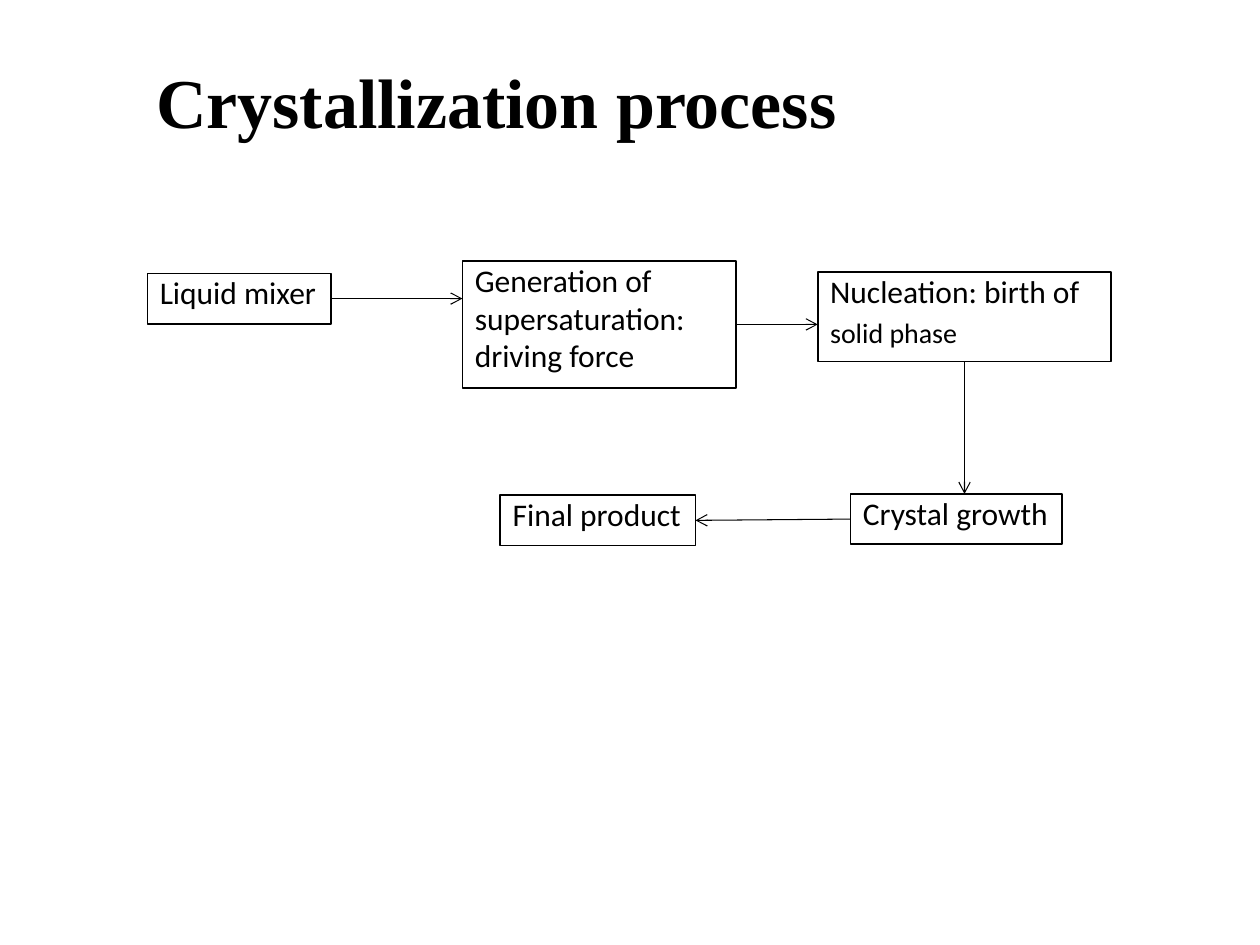
from lxml.etree import SubElement
from pptx import Presentation
from pptx.dml.color import RGBColor
from pptx.enum.shapes import MSO_CONNECTOR, MSO_SHAPE
from pptx.enum.text import MSO_ANCHOR, MSO_AUTO_SIZE, PP_ALIGN
from pptx.oxml.ns import qn
from pptx.util import Inches, Pt

BLACK = RGBColor(0, 0, 0)


def write_text(frame, text, sizes, font="Calibri", bold=False, spacing=1.0,
               gap=0, left=0.1, top=0):
    frame.word_wrap = True
    frame.auto_size = MSO_AUTO_SIZE.NONE
    frame.vertical_anchor = MSO_ANCHOR.TOP
    frame.margin_left, frame.margin_top = Inches(left), Inches(top)
    frame.margin_right = frame.margin_bottom = 0
    frame.text = text
    for index, (para, size) in enumerate(zip(frame.paragraphs, sizes)):
        para.alignment = PP_ALIGN.LEFT
        para.line_spacing = spacing
        para.space_before = Pt(gap if index else 0)
        para.font.name = font
        para.font.size = Pt(size)
        para.font.bold = bold
        para.font.color.rgb = BLACK


deck = Presentation()
deck.slide_width, deck.slide_height = Inches(10), Inches(7.5)
page = deck.slides.add_slide(deck.slide_layouts[5])

title = page.shapes.title
title.left, title.top = Inches(1.23), Inches(0.58)
title.width, title.height = Inches(6.56), Inches(0.53)
write_text(title.text_frame, "Crystallization process", [40], font="Times New Roman",
           bold=True, spacing=Pt(37.8), left=0.01, top=0.03)

steps = [
    ("Liquid mixer", [18], 1.17, 2.17, 1.46, 0.4),
    ("Generation of supersaturation: driving force", [18], 3.67, 2.07, 2.17, 1.01),
    ("Nucleation: birth of\nsolid phase", [18, 16], 6.49, 2.16, 2.33, 0.71),
    ("Crystal growth", [18], 6.75, 3.92, 1.68, 0.4),
    ("Final product", [18], 3.97, 3.93, 1.55, 0.4),
]
boxes = []
for text, sizes, *place in steps:
    box = page.shapes.add_shape(MSO_SHAPE.RECTANGLE, *map(Inches, place))
    box.shadow.inherit = False
    box.fill.background()
    box.line.color.rgb = BLACK
    box.line.width = Pt(1)
    write_text(box.text_frame, text, sizes, gap=3)
    boxes.append(box)

mixer, generation, nucleation, growth, product = boxes
mixer_middle = mixer.top + mixer.height // 2
generation_middle = generation.top + generation.height // 2
nucleation_center = nucleation.left + nucleation.width // 2
arrows = [
    (mixer.left + mixer.width, mixer_middle, generation.left, mixer_middle),
    (generation.left + generation.width, generation_middle,
     nucleation.left, generation_middle),
    (nucleation_center, nucleation.top + nucleation.height,
     nucleation_center, growth.top),
    (growth.left, growth.top + growth.height // 2,
     product.left + product.width, product.top + product.height // 2),
]
for ends in arrows:
    arrow = page.shapes.add_connector(MSO_CONNECTOR.STRAIGHT, *ends)
    arrow.line.color.rgb = BLACK
    arrow.line.width = Pt(0.6)
    SubElement(arrow.line._get_or_add_ln(), qn("a:tailEnd"), type="arrow")
    SubElement(arrow._element.spPr, qn("a:effectLst"))

deck.save("out.pptx")
